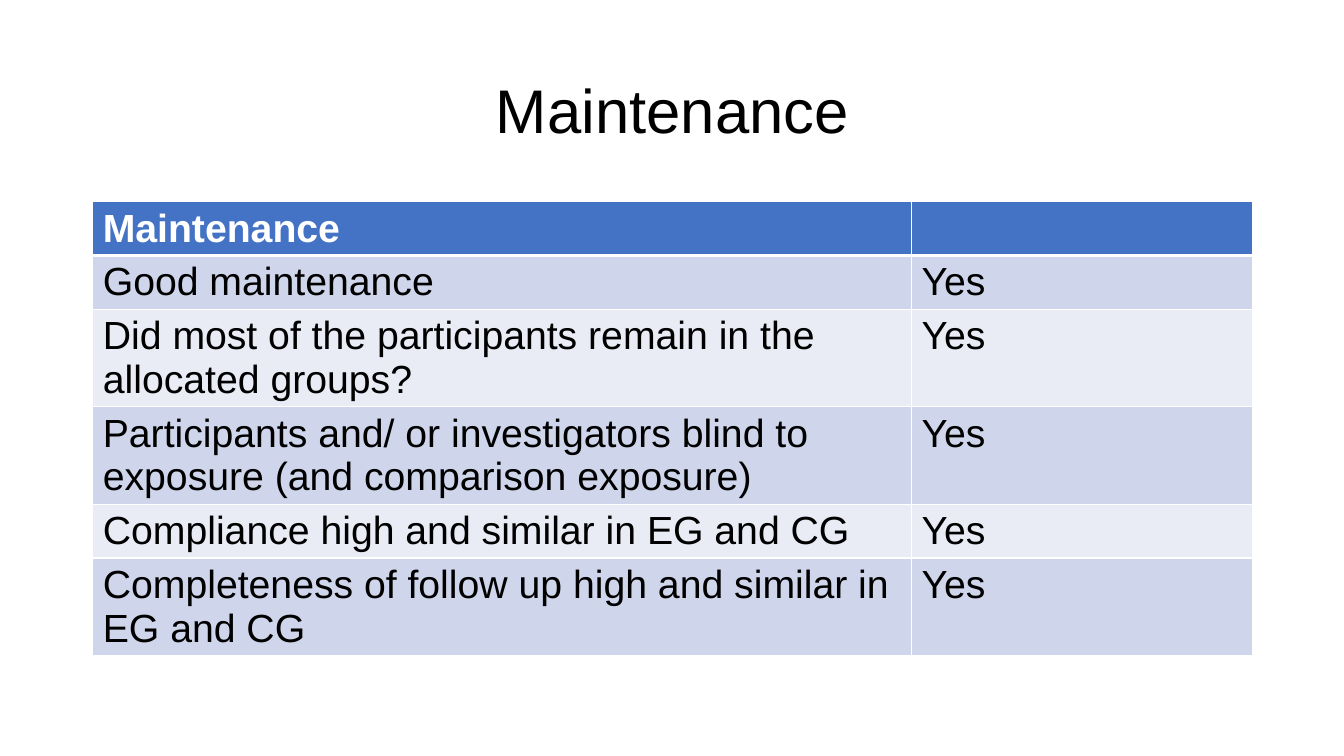
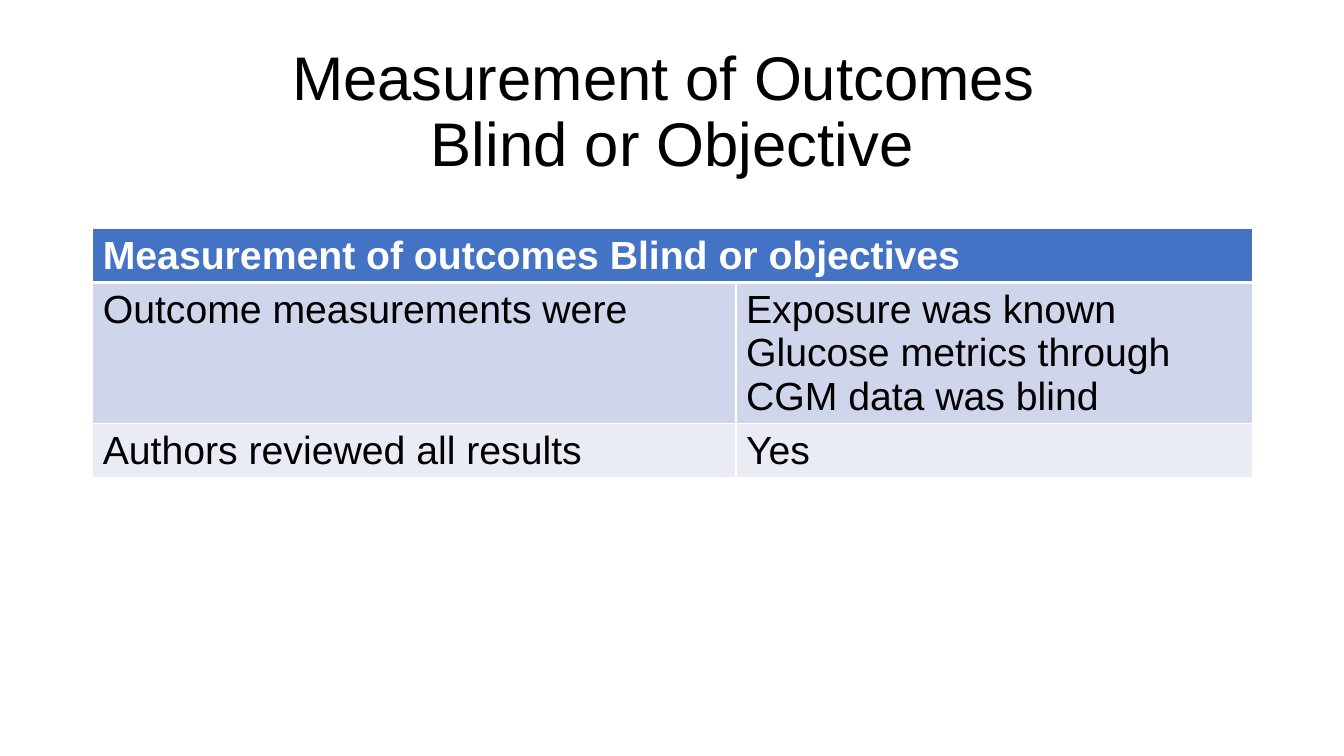
from dataclasses import dataclass

from lxml import etree
from pptx import Presentation
from pptx.dml.color import RGBColor
from pptx.enum.text import MSO_ANCHOR, PP_ALIGN
from pptx.oxml.ns import qn
from pptx.util import Emu, Pt

CENTER = PP_ALIGN.CENTER
MIDDLE = MSO_ANCHOR.MIDDLE
EMU_PER_PX = 9144
TITLE_ONLY = 5


@dataclass(frozen=True)
class Theme:
    font: str = "Arial"
    ink: str = "000000"
    paper: str = "FFFFFF"
    header: str = "4472C4"
    bands: tuple = ("CFD5EA", "E9EBF5")
    title_size: int = 44
    table_size: int = 28
    title_spacing: float = 0.9
    rule: int = 1
    header_rule: int = 3


def px(length):
    return Emu(length * EMU_PER_PX)


class DeckBuilder:
    LEFT, WIDTH = 92, 1150
    TITLE_TOP, TITLE_HEIGHT = 40, 145
    ROW_HEIGHT = 41

    def __init__(self, theme):
        self.theme = theme
        self.deck = Presentation()
        self.deck.slide_width, self.deck.slide_height = px(1333), px(750)
        self.page = None

    def style(self, para, size, color, bold=False):
        font = para.font
        font.name = self.theme.font
        font.size = Pt(size)
        font.bold = bold
        font.color.rgb = RGBColor.from_string(color)

    def add_page(self, title):
        self.page = self.deck.slides.add_slide(self.deck.slide_layouts[TITLE_ONLY])
        box = self.page.shapes.title
        box.left, box.top = px(self.LEFT), px(self.TITLE_TOP)
        box.width, box.height = px(self.WIDTH), px(self.TITLE_HEIGHT)
        frame = box.text_frame
        frame.text = title
        frame.word_wrap = True
        frame.vertical_anchor = MIDDLE
        para = frame.paragraphs[0]
        para.alignment = CENTER
        para.line_spacing = self.theme.title_spacing
        self.style(para, self.theme.title_size, self.theme.ink)

    def add_borders(self, cell, top, bottom):
        properties = cell._tc.get_or_add_tcPr()
        rule = self.theme.rule
        for side, width in (("L", rule), ("R", rule), ("T", top), ("B", bottom)):
            line = etree.SubElement(properties, qn(f"a:ln{side}"), w=str(Pt(width)))
            fill = etree.SubElement(line, qn("a:solidFill"))
            etree.SubElement(fill, qn("a:srgbClr"), val=self.theme.paper)

    def fill_cell(self, cell, text, row):
        theme = self.theme
        is_header = row == 0
        top = theme.header_rule if row == 1 else theme.rule
        bottom = theme.header_rule if is_header else theme.rule
        self.add_borders(cell, top, bottom)
        cell.fill.solid()
        fill = theme.header if is_header else theme.bands[(row - 1) % 2]
        cell.fill.fore_color.rgb = RGBColor.from_string(fill)
        cell.text_frame.text = text
        color = theme.paper if is_header else theme.ink
        for para in cell.text_frame.paragraphs:
            self.style(para, theme.table_size, color, is_header)

    def add_table(self, top, widths, rows, merge_header=False):
        table = self.page.shapes.add_table(
            len(rows), len(widths), px(self.LEFT), px(top),
            px(self.WIDTH), px(self.ROW_HEIGHT * len(rows)),
        ).table
        for column, width in zip(table.columns, widths):
            column.width = px(width)
        for index, texts in enumerate(rows):
            table.rows[index].height = px(self.ROW_HEIGHT)
            for column, text in enumerate(texts):
                self.fill_cell(table.cell(index, column), text, index)
        if merge_header:
            table.cell(0, 0).merge(table.cell(0, len(widths) - 1))


def main():
    builder = DeckBuilder(Theme())

    builder.add_page("Maintenance")
    criteria = (
        "Good maintenance",
        "Did most of the participants remain in the allocated groups?",
        "Participants and/ or investigators blind to exposure (and comparison exposure)",
        "Compliance high and similar in EG and CG",
        "Completeness of follow up high and similar in EG and CG",
    )
    rows = [("Maintenance", "")] + [(criterion, "Yes") for criterion in criteria]
    builder.add_table(200, (812, 338), rows)

    builder.add_page("Measurement of Outcomes \vBlind or Objective")
    rows = [
        ("Measurement of outcomes Blind or objectives", ""),
        (
            "Outcome measurements were",
            "Exposure was known\nGlucose metrics through CGM data was blind",
        ),
        ("Authors reviewed all results", "Yes"),
    ]
    builder.add_table(227, (638, 512), rows, merge_header=True)

    builder.deck.save("out.pptx")


if __name__ == "__main__":
    main()
